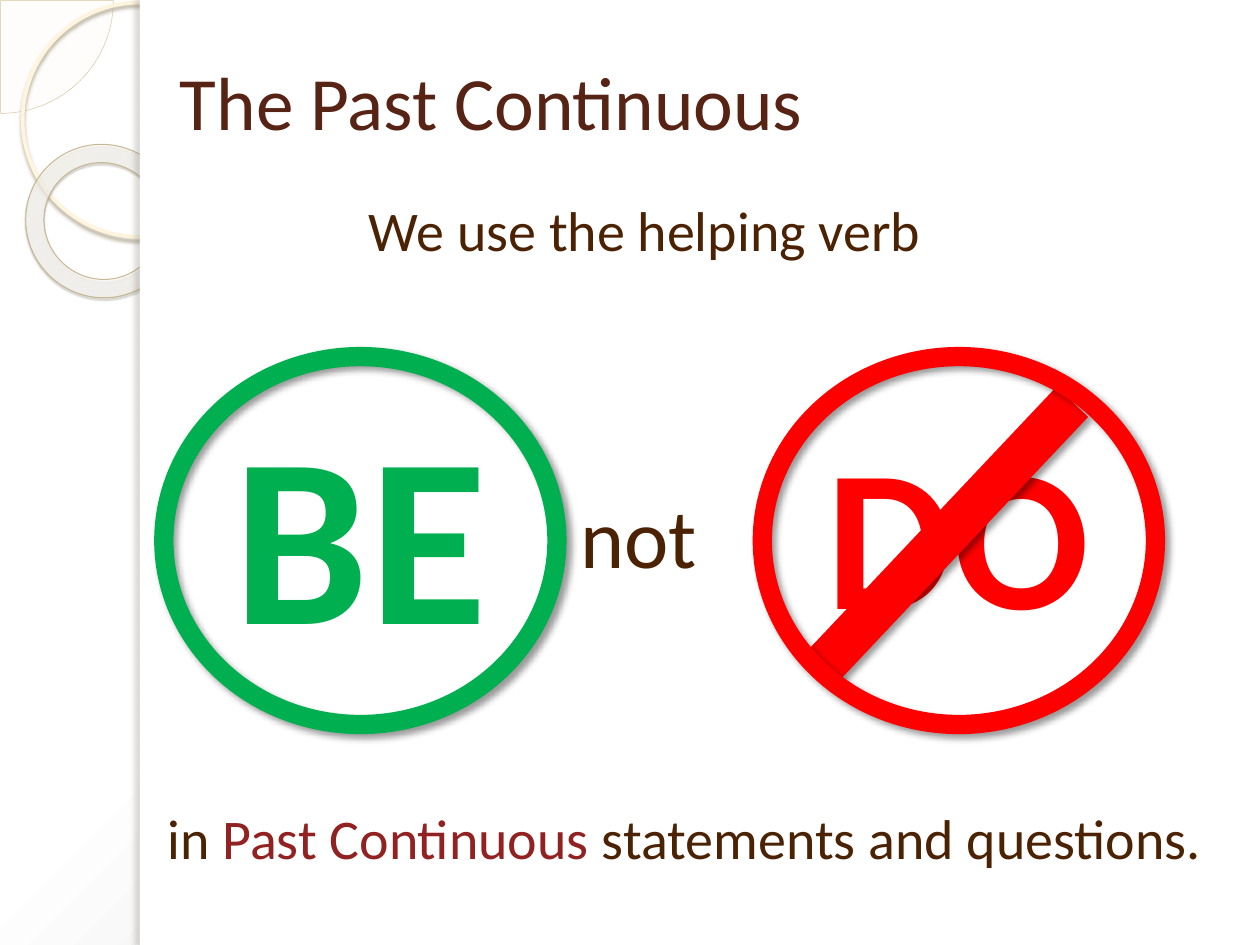
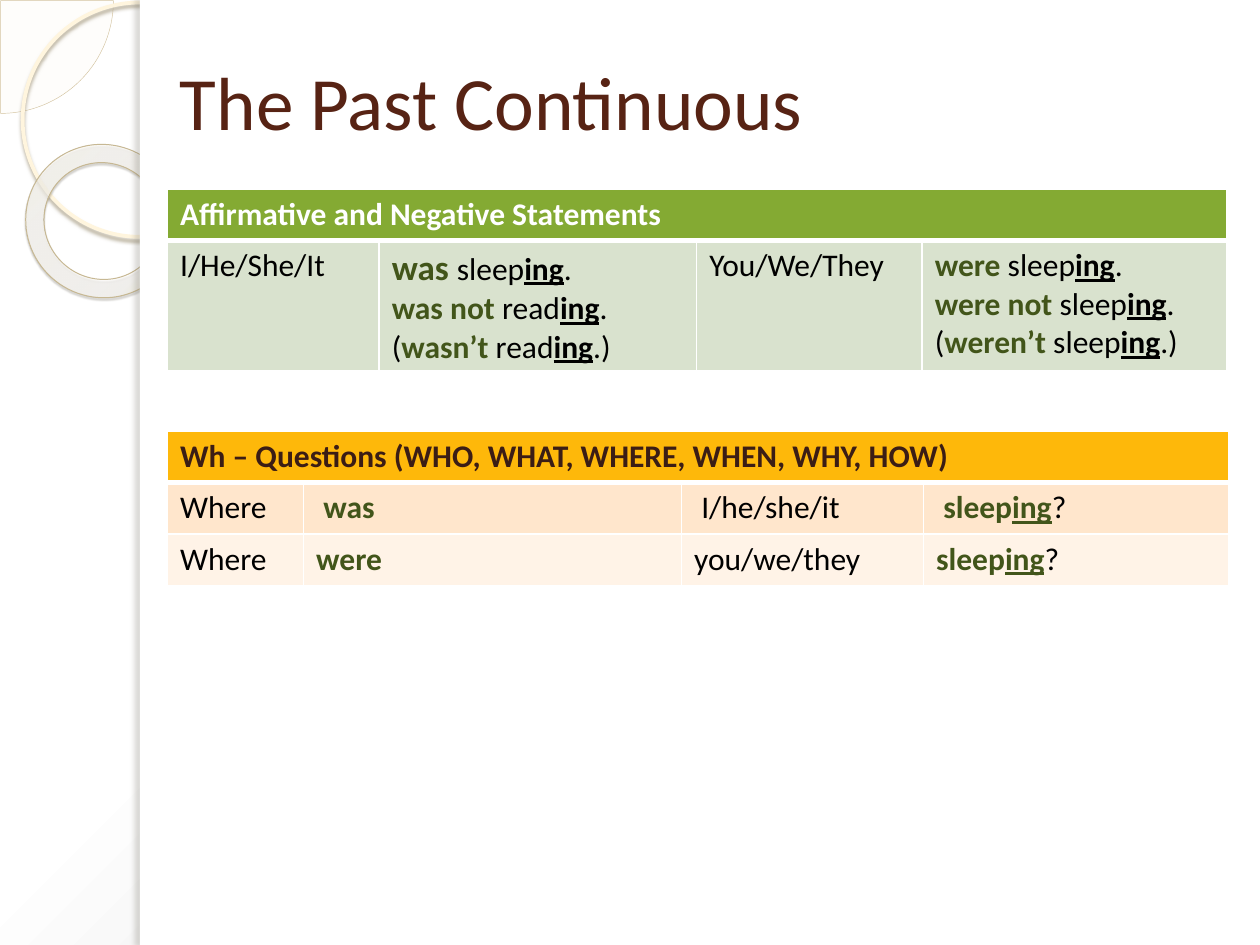
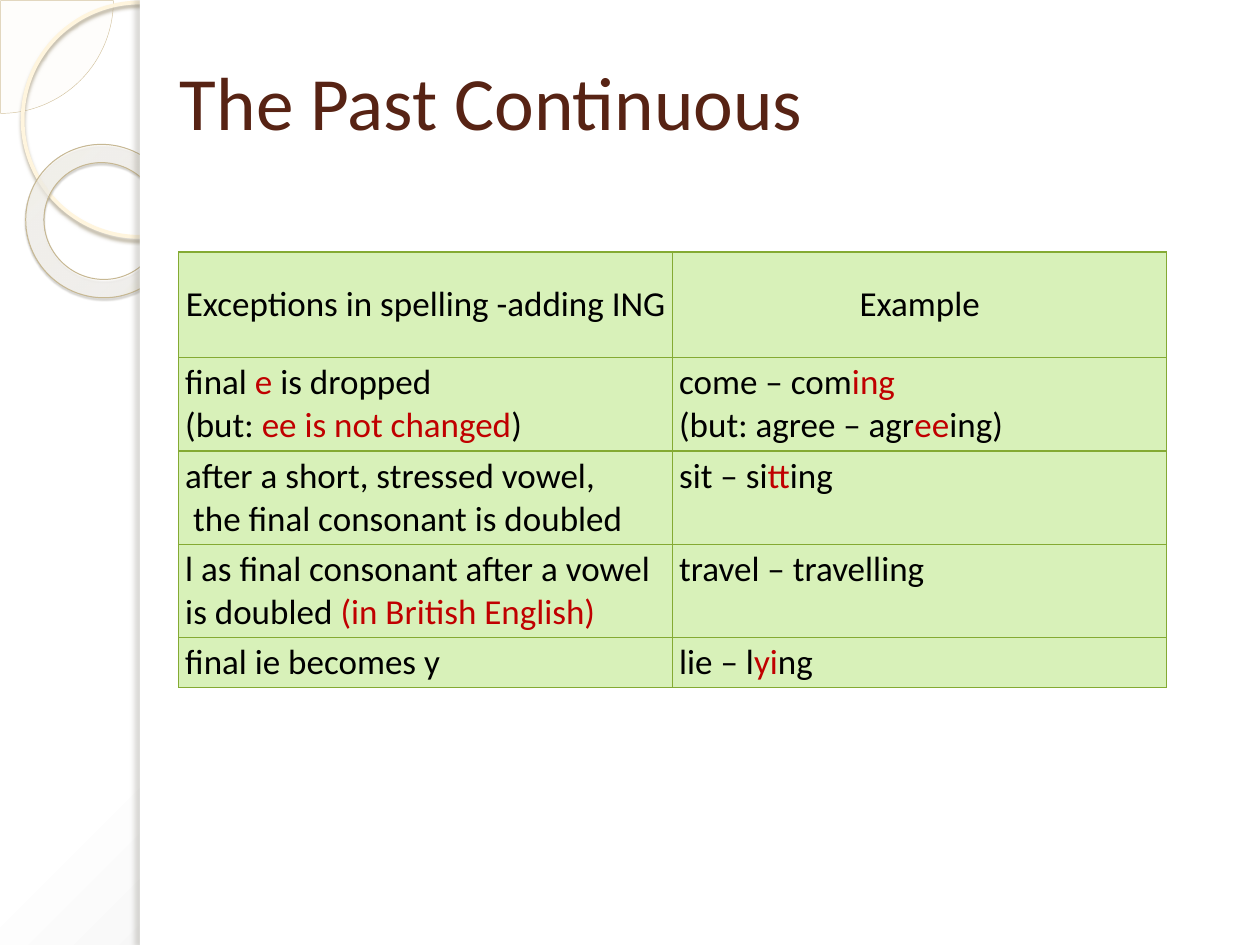
from lxml import etree
from pptx import Presentation
from pptx import util as u
from pptx.dml.color import RGBColor
from pptx.enum import shapes, text
from pptx.oxml.ns import qn

WIDTH, HEIGHT = 10, 7.5
BAND = 1.11
LEFT = 1.33
FONT = "Calibri"

WHITE = RGBColor(0xFF, 0xFF, 0xFF)
BLACK = RGBColor(0x00, 0x00, 0x00)
GREY = RGBColor(0xC5, 0xC5, 0xC5)
MAROON = RGBColor(0x57, 0x23, 0x14)
BROWN = RGBColor(0x4B, 0x22, 0x03)
DARK_BROWN = RGBColor(0x3B, 0x1D, 0x15)
BRICK = RGBColor(0x92, 0x22, 0x22)
CRIMSON = RGBColor(0xC0, 0x00, 0x00)
GO_GREEN = RGBColor(0x00, 0xB0, 0x50)
STOP_RED = RGBColor(0xFF, 0x00, 0x00)
LETTER_EDGE = RGBColor(0xFE, 0xFE, 0xFE)
OLIVE = RGBColor(0x42, 0x55, 0x1A)
LEAF = RGBColor(0x84, 0xAA, 0x33)
SAGE = RGBColor(0xD9, 0xE2, 0xCE)
LIME = RGBColor(0xD8, 0xF1, 0xB9)
AMBER = RGBColor(0xFE, 0xB8, 0x0A)
PEACH = RGBColor(0xFF, 0xE6, 0xCC)
PALE_PEACH = RGBColor(0xFF, 0xF3, 0xE7)
CREAM = RGBColor(0xFE, 0xFA, 0xF4)
SAND = RGBColor(0xD3, 0xC3, 0x9F)
RING_CREAM = RGBColor(0xFF, 0xF5, 0xDE)
RING_SHADE = RGBColor(0xB0, 0xA6, 0x8F)
DONUT_EDGE = RGBColor(0xC7, 0xB8, 0x93)
DONUT_SHADE = RGBColor(0x5A, 0x54, 0x44)
DONUT_INNER = RGBColor(0xFF, 0xFC, 0xF6)
DONUT_MIDDLE = RGBColor(0xFF, 0xFE, 0xFB)
DONUT_OUTER = RGBColor(0xF0, 0xD2, 0x8E)
BAND_SHADE = RGBColor(0x73, 0x6F, 0x63)

VERB = {"bold": True, "color": OLIVE}
ENDING = {"bold": True, "underline": True}
VERB_ENDING = {**VERB, "underline": True}
HOT = {"color": CRIMSON}

TITLE = "The Past Continuous"
HELPING = "We use the helping verb"
CLOSING = ["in ", ("Past Continuous ", {"color": BRICK}), "statements and questions."]
SIGNS = [
    {"word": "BE", "size": 138, "color": GO_GREEN, "left": 1.3, "box": (1.47, 2.99, 2.78, 2.42)},
    {"word": "DO", "size": 115, "color": STOP_RED, "left": 6.05, "box": (6.15, 3.19, 2.91, 2.04)},
]
SIGN_TOP, SIGN_WIDTH, SIGN_HEIGHT = 2.83, 3.12, 2.92
SLASH = (8.51, 3.19, 6.5, 5.32)
SIGN_SHADOW = (BLACK, 40, 4, 3, 45)


def ing(stem, after="."):
    return [stem, ("ing", ENDING), after]


STATEMENTS = {
    "place": (LEFT, 1.5),
    "columns": (1.68, 2.52, 1.79, 2.42),
    "heights": (0.41, 1.03),
    "heading": "Affirmative and Negative Statements",
    "heading_color": WHITE,
    "fills": (LEAF, SAGE),
    "rows": [[
        "I/He/She/It",
        [[("was ", {**VERB, "size": 20}), *ing("sleep")],
         [("was not ", VERB), *ing("read")],
         ["(", ("wasn’t", VERB), *ing(" read", ".)")]],
        "You/We/They",
        [[("were", VERB), *ing(" sleep")],
         [("were not ", VERB), *ing("sleep")],
         ["(", ("weren’t", VERB), *ing(" sleep", ".)")]],
    ]],
}
QUESTIONS = {
    "place": (LEFT, 3.42),
    "columns": (1.08, 3, 1.92, 2.42),
    "heights": (0.41, 0.41, 0.41),
    "heading": "Wh – Questions (WHO, WHAT, WHERE, WHEN, WHY, HOW)",
    "heading_color": DARK_BROWN,
    "fills": (AMBER, PEACH, PALE_PEACH),
    "rows": [
        ["Where", [[" ", ("was", VERB)]], " I/he/she/it",
         [[" ", ("sleep", VERB), ("ing", VERB_ENDING), "?"]]],
        ["Where", [[("were", VERB)]], "you/we/they",
         [[("sleep", VERB), ("ing", VERB_ENDING), "?"]]],
    ],
}
SPELLING_PLACE = (1.42, 2)
SPELLING_COLUMNS = (3.92, 3.92)
SPELLING_HEIGHTS = (0.84, 0.74, 0.74, 0.74, 0.4)
SPELLING = [
    ["Exceptions in spelling -adding ING", "Example"],
    [[["final ", ("e", HOT), " is dropped"],
      ["(but: ", ("ee is not changed", HOT), ")"]],
     [["come – com", ("ing", HOT)],
      ["(but: agree – agr", ("ee", HOT), "ing)"]]],
    [[["after a short, stressed vowel,"], [" the final consonant is doubled"]],
     [["sit – si", ("tt", HOT), "ing"]]],
    [[["l as final consonant after a vowel is doubled ", ("(in British English)", HOT)]],
     "travel – travelling"],
    ["final ie becomes y", [["lie – l", ("yi", HOT), "ng"]]],
]


def node(parent, tag, **attributes):
    return etree.SubElement(parent, qn(tag), {k: str(v) for k, v in attributes.items()})


def tint(parent, color, opacity=100):
    swatch = node(parent, "a:srgbClr", val=color)
    if opacity < 100:
        node(swatch, "a:alpha", val=opacity * 1000)


def add_shadow(shape, shadow=None):
    effects = node(shape._element.spPr, "a:effectLst")
    if shadow:
        color, opacity, blur, distance, angle = shadow
        outer = node(effects, "a:outerShdw", blurRad=u.Pt(blur), dist=u.Pt(distance),
                     dir=angle * 60000, algn="tl", rotWithShape=0)
        tint(outer, color, opacity)


def round_gradient(owner, fill, stops, focus):
    fill.solid()
    solid = owner._element.find(".//" + qn("a:solidFill"))
    gradient = etree.Element(qn("a:gradFill"), rotWithShape="1")
    stop_list = node(gradient, "a:gsLst")
    for position, color, opacity in stops:
        tint(node(stop_list, "a:gs", pos=position * 1000), color, opacity)
    circle = node(gradient, "a:path", path="circle")
    node(circle, "a:fillToRect", **{side: share * 1000 for side, share in zip("ltrb", focus)})
    solid.getparent().replace(solid, gradient)


def write(frame, content, size=18, color=BLACK, bold=False, align=None,
          before=0, indent=0, edge=None):
    paragraphs = [[content]] if isinstance(content, str) else content
    for index, runs in enumerate(paragraphs):
        paragraph = frame.paragraphs[0] if index == 0 else frame.add_paragraph()
        paragraph.alignment = align
        if before:
            paragraph.space_before = u.Pt(before)
        if indent:
            paragraph._p.get_or_add_pPr().set("marL", str(u.Inches(indent)))
        for part in runs:
            words, style = (part, {}) if isinstance(part, str) else part
            run = paragraph.add_run()
            run.text = words
            run.font.name = FONT
            run.font.size = u.Pt(style.get("size", size))
            run.font.bold = style.get("bold", bold)
            run.font.underline = style.get("underline", False)
            run.font.color.rgb = style.get("color", color)
            if edge:
                outline = etree.Element(qn("a:ln"), w=str(u.Pt(1.5)))
                tint(node(outline, "a:solidFill"), edge)
                run._r.get_or_add_rPr().insert(0, outline)


def add_words(slide, box, content, wrap=True, anchor=text.MSO_ANCHOR.TOP, **style):
    frame = slide.shapes.add_textbox(*map(u.Inches, box)).text_frame
    frame.word_wrap = wrap
    frame.vertical_anchor = anchor
    if not wrap:
        frame.auto_size = text.MSO_AUTO_SIZE.SHAPE_TO_FIT_TEXT
    write(frame, content, **style)


def add_figure(slide, kind, box, fill=None, line=None, width=1, shadow=None):
    figure = slide.shapes.add_shape(kind, *map(u.Inches, box))
    if fill is None:
        figure.fill.background()
    else:
        figure.fill.solid()
        figure.fill.fore_color.rgb = fill
    if line is None:
        figure.line.fill.background()
    else:
        figure.line.color.rgb = line
        figure.line.width = u.Pt(width)
    add_shadow(figure, shadow)
    return figure


def add_grid(slide, place, columns, heights):
    table = slide.shapes.add_table(len(heights), len(columns), *map(
        u.Inches, (*place, sum(columns), sum(heights)))).table
    table.first_row = table.horz_banding = False
    for column, width in zip(table.columns, columns):
        column.width = u.Inches(width)
    for row, height in zip(table.rows, heights):
        row.height = u.Inches(height)
    return table


def dress_cell(cell, fill, border, width, bottom=None):
    properties = cell._tc.get_or_add_tcPr()
    for side in "LRTB":
        thickness = bottom if side == "B" and bottom else width
        edge = node(properties, "a:ln" + side, w=u.Pt(thickness))
        tint(node(edge, "a:solidFill"), border)
    cell.fill.solid()
    cell.fill.fore_color.rgb = fill


def start_slide(deck):
    slide = deck.slides.add_slide(deck.slide_layouts[6])
    round_gradient(slide, slide.background.fill,
                   [(0, WHITE, 100), (40, WHITE, 100), (100, GREY, 100)], (-24, -20, 124, 120))
    kinds = shapes.MSO_SHAPE
    pie = add_figure(slide, kinds.PIE, (-0.89, -0.89, 1.79, 1.79), CREAM, SAND, 0.25)
    pie.adjustments[0], pie.adjustments[1] = 0, 54
    node(pie._element.spPr.find(".//" + qn("a:srgbClr")), "a:alpha", val=33000)
    add_figure(slide, kinds.OVAL, (0.18, 0.02, 1.86, 1.86), line=RING_CREAM, width=2.15,
               shadow=(RING_SHADE, 85, 2, 2, 90))
    donut = add_figure(slide, kinds.DONUT, (0.2, 1.15, 1.23, 1.21), line=DONUT_EDGE, width=0.58,
                       shadow=(DONUT_SHADE, 35, 1, 1.2, 75))
    donut.adjustments[0] = 0.12
    donut.rotation = 38.6
    round_gradient(donut, donut.fill,
                   [(0, DONUT_INNER, 70), (70, DONUT_MIDDLE, 55), (100, DONUT_OUTER, 60)],
                   (-408, -50, 508, 150))
    add_figure(slide, kinds.RECTANGLE, (BAND, 0, WIDTH - BAND, HEIGHT), WHITE)
    add_figure(slide, kinds.RECTANGLE, (BAND, 0, 0.08, HEIGHT), WHITE,
               shadow=(BAND_SHADE, 25, 3, 3, 180))
    add_words(slide, (LEFT, 0.17, 8.2, 1.25), TITLE, anchor=text.MSO_ANCHOR.MIDDLE,
              size=43, color=MAROON)
    return slide


def build_signs(deck):
    slide = start_slide(deck)
    sentence = {"size": 32, "color": BROWN, "before": 6, "indent": 0.09}
    add_words(slide, (2.74, 1.5, 6.33, 0.92), HELPING, **sentence)
    add_words(slide, (4.42, 3.8, 1.23, 0.91), "not", wrap=False, size=48, color=BROWN, indent=0.09)
    for sign in SIGNS:
        add_words(slide, sign["box"], sign["word"], wrap=False, size=sign["size"],
                  color=sign["color"], bold=True, align=text.PP_ALIGN.CENTER, edge=LETTER_EDGE)
    slash = slide.shapes.add_connector(shapes.MSO_CONNECTOR.STRAIGHT, *map(u.Inches, SLASH))
    slash.line.color.rgb = STOP_RED
    slash.line.width = u.Pt(25)
    add_shadow(slash, SIGN_SHADOW)
    for sign in SIGNS:
        add_figure(slide, shapes.MSO_SHAPE.OVAL,
                   (sign["left"], SIGN_TOP, SIGN_WIDTH, SIGN_HEIGHT),
                   line=sign["color"], width=11, shadow=SIGN_SHADOW)
    add_words(slide, (1.14, 6.33, 8.83, 0.92), [CLOSING], **sentence)


def build_forms(deck):
    slide = start_slide(deck)
    for form in (STATEMENTS, QUESTIONS):
        table = add_grid(slide, form["place"], form["columns"], form["heights"])
        last = len(form["columns"]) - 1
        for r, fill in enumerate(form["fills"]):
            for c in range(last + 1):
                dress_cell(table.cell(r, c), fill, WHITE, 1, bottom=3 if r == 0 else None)
        table.cell(0, 0).merge(table.cell(0, last))
        write(table.cell(0, 0).text_frame, form["heading"], bold=True, color=form["heading_color"])
        for r, row in enumerate(form["rows"], 1):
            for c, content in enumerate(row):
                write(table.cell(r, c).text_frame, content)


def build_spelling(deck):
    slide = start_slide(deck)
    table = add_grid(slide, SPELLING_PLACE, SPELLING_COLUMNS, SPELLING_HEIGHTS)
    for r, row in enumerate(SPELLING):
        for c, content in enumerate(row):
            cell = table.cell(r, c)
            dress_cell(cell, LIME, LEAF, 0.75)
            cell.margin_left = cell.margin_right = u.Inches(0.05)
            cell.margin_top = cell.margin_bottom = u.Inches(0.03 if r else 0.02)
            if r == 0:
                cell.vertical_anchor = text.MSO_ANCHOR.MIDDLE
            write(cell.text_frame, content, size=20,
                  align=None if r else text.PP_ALIGN.CENTER)


def main():
    deck = Presentation()
    deck.slide_width, deck.slide_height = u.Inches(WIDTH), u.Inches(HEIGHT)
    build_signs(deck)
    build_forms(deck)
    build_spelling(deck)
    deck.save("out.pptx")


if __name__ == "__main__":
    main()
